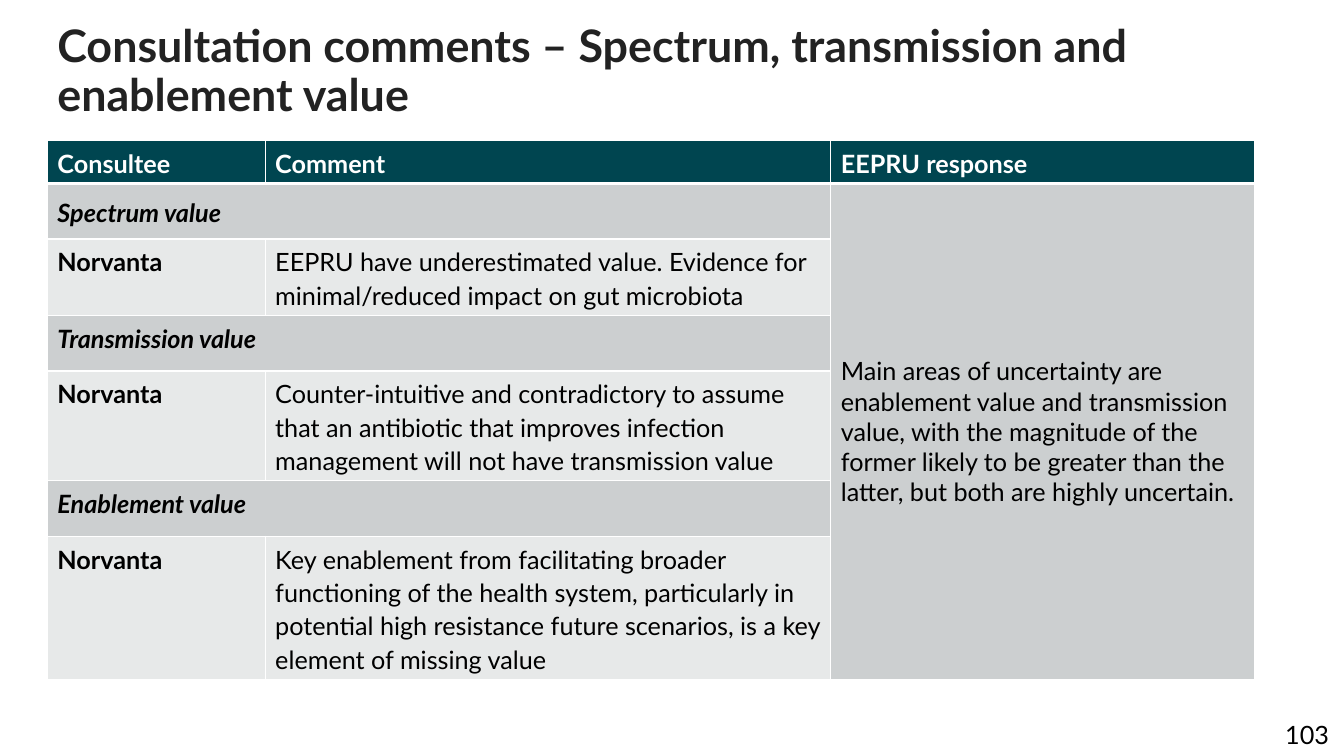
from dataclasses import dataclass

from pptx import Presentation
from pptx.dml.color import RGBColor
from pptx.enum.text import MSO_ANCHOR, MSO_AUTO_SIZE, PP_ALIGN
from pptx.oxml.ns import qn
from pptx.util import Inches, Pt
from lxml.etree import SubElement


@dataclass(frozen=True)
class Theme:
    font: str = "Lato"
    title_size: int = 32
    body_size: int = 18
    title: str = "222222"
    text: str = "000000"
    white: str = "FFFFFF"
    header: str = "004550"
    band: str = "CCCFD0"
    row: str = "E7E9E9"


class SlideBuilder:
    def __init__(self, prs, theme):
        self.theme = theme
        self.s = prs.slides.add_slide(prs.slide_layouts[6])

    def fill_text(self, tf, text, color, size=None, para=None, **font):
        p = tf.paragraphs[0]
        for name, value in (para or {}).items():
            setattr(p, name, value)
        r = p.add_run()
        r.text = text
        values = {"name": self.theme.font, "size": Pt(size or self.theme.body_size), **font}
        for name, value in values.items():
            setattr(r.font, name, value)
        r.font.color.rgb = RGBColor.from_string(color)

    def text_box(self, box, text, color, frame=None, **style):
        tf = self.s.shapes.add_textbox(*map(Inches, box)).text_frame
        for name, value in {"word_wrap": True, **(frame or {})}.items():
            setattr(tf, name, value)
        self.fill_text(tf, text, color, **style)

    def table(self, box, widths, heights):
        table = self.s.shapes.add_table(len(heights), len(widths), *map(Inches, box)).table
        for column, width in zip(table.columns, widths):
            column.width = Inches(width)
        for row, height in zip(table.rows, heights):
            row.height = Inches(height)
        return table

    def cell(self, cell, fill, bottom=1):
        tcPr = cell._tc.get_or_add_tcPr()
        for side, width in {"L": 1, "R": 1, "T": 1, "B": bottom}.items():
            ln = SubElement(tcPr, qn(f"a:ln{side}"), w=str(Pt(width)))
            SubElement(SubElement(ln, qn("a:solidFill")), qn("a:srgbClr"), val=self.theme.white)
        cell.fill.solid()
        cell.fill.fore_color.rgb = RGBColor.from_string(fill)


def main():
    prs = Presentation()
    prs.slide_width, prs.slide_height = Inches(13.33), Inches(7.5)
    theme = Theme()
    slide = SlideBuilder(prs, theme)

    slide.text_box((11.44, 7.09, 1.84, 0.4), "103", theme.text,
                   frame={"auto_size": MSO_AUTO_SIZE.SHAPE_TO_FIT_TEXT},
                   para={"alignment": PP_ALIGN.RIGHT})
    slide.text_box((0.47, 0.19, 12.12, 1.4),
                   "Consultation comments – Spectrum, transmission and enablement value",
                   theme.title, size=theme.title_size, para={"line_spacing": 0.9}, bold=True)

    headings = ["Consultee", "Comment", "EEPRU response"]
    consultee = "Norvanta"
    comments = {
        "Spectrum value": "EEPRU have underestimated value. Evidence for minimal/reduced "
                          "impact on gut microbiota",
        "Transmission value": "Counter-intuitive and contradictory to assume that an antibiotic "
                              "that improves infection management will not have transmission value",
        "Enablement value": "Key enablement from facilitating broader functioning of the health "
                            "system, particularly in potential high resistance future scenarios, "
                            "is a key element of missing value",
    }
    response = ("Main areas of uncertainty are enablement value and transmission value, with the "
                "magnitude of the former likely to be greater than the latter, but both are "
                "highly uncertain.")

    spaced = {"line_spacing": 1.1, "space_after": Pt(6)}
    table = slide.table((0.47, 1.39, 11.97, 5.34), [2.16, 5.61, 4.2],
                        [0.43, 0.55, 0.76, 0.55, 1.09, 0.55, 1.41])
    for row in range(7):
        for column in range(3):
            fill = theme.band if row % 2 or column == 2 else theme.row
            slide.cell(table.cell(row, column), fill if row else theme.header,
                       bottom=1 if row else 3)

    for column, heading in enumerate(headings):
        slide.fill_text(table.cell(0, column).text_frame, heading, theme.white,
                        para=spaced, bold=True)

    for i, (topic, comment) in enumerate(comments.items()):
        row = 2 * i + 1
        band = table.cell(row, 0)
        band.merge(table.cell(row, 1))
        if row == 1:
            band.vertical_anchor = MSO_ANCHOR.MIDDLE
        slide.fill_text(band.text_frame, topic, theme.text, para=spaced, bold=True, italic=True)
        for column, text in enumerate([consultee, comment]):
            slide.fill_text(table.cell(row + 1, column).text_frame, text, theme.text,
                            para=spaced, bold=column == 0)

    answer = table.cell(1, 2)
    answer.merge(table.cell(6, 2))
    answer.vertical_anchor = MSO_ANCHOR.MIDDLE
    slide.fill_text(answer.text_frame, response, theme.text, bold=False)

    prs.save("out.pptx")


if __name__ == "__main__":
    main()
